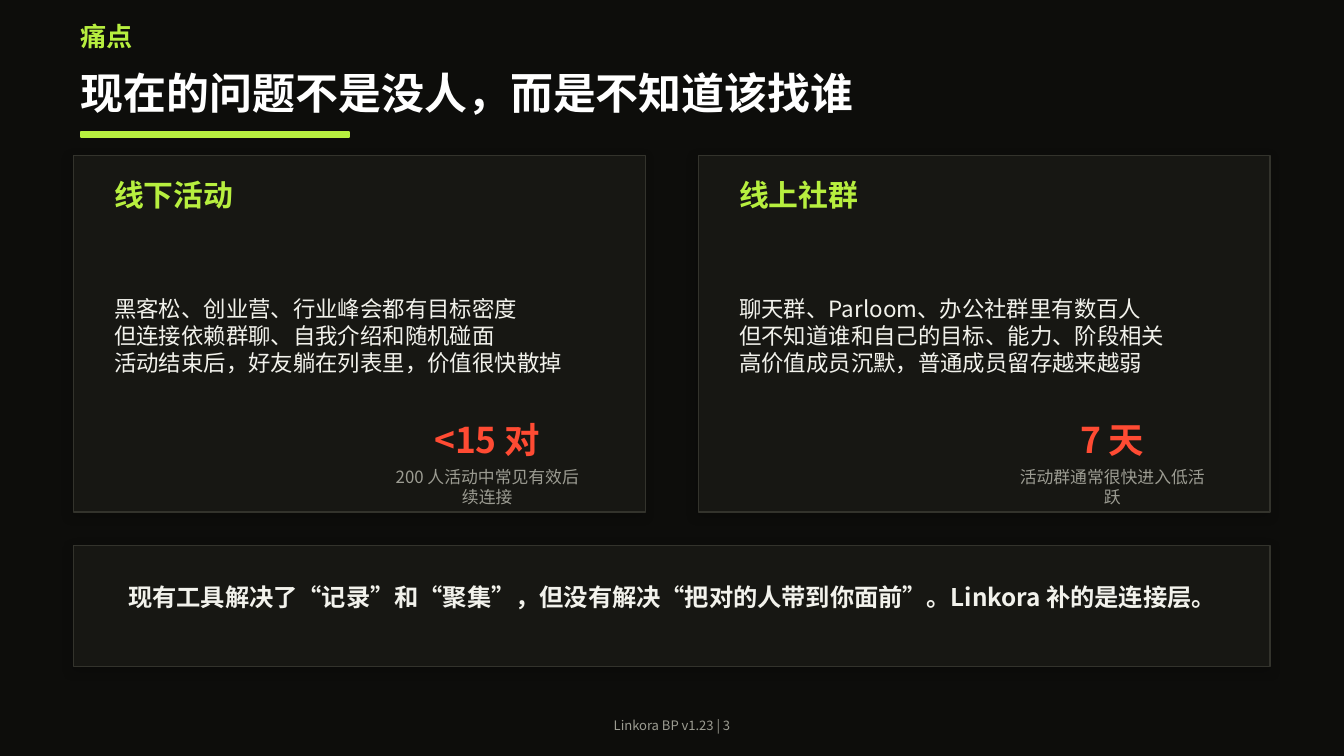
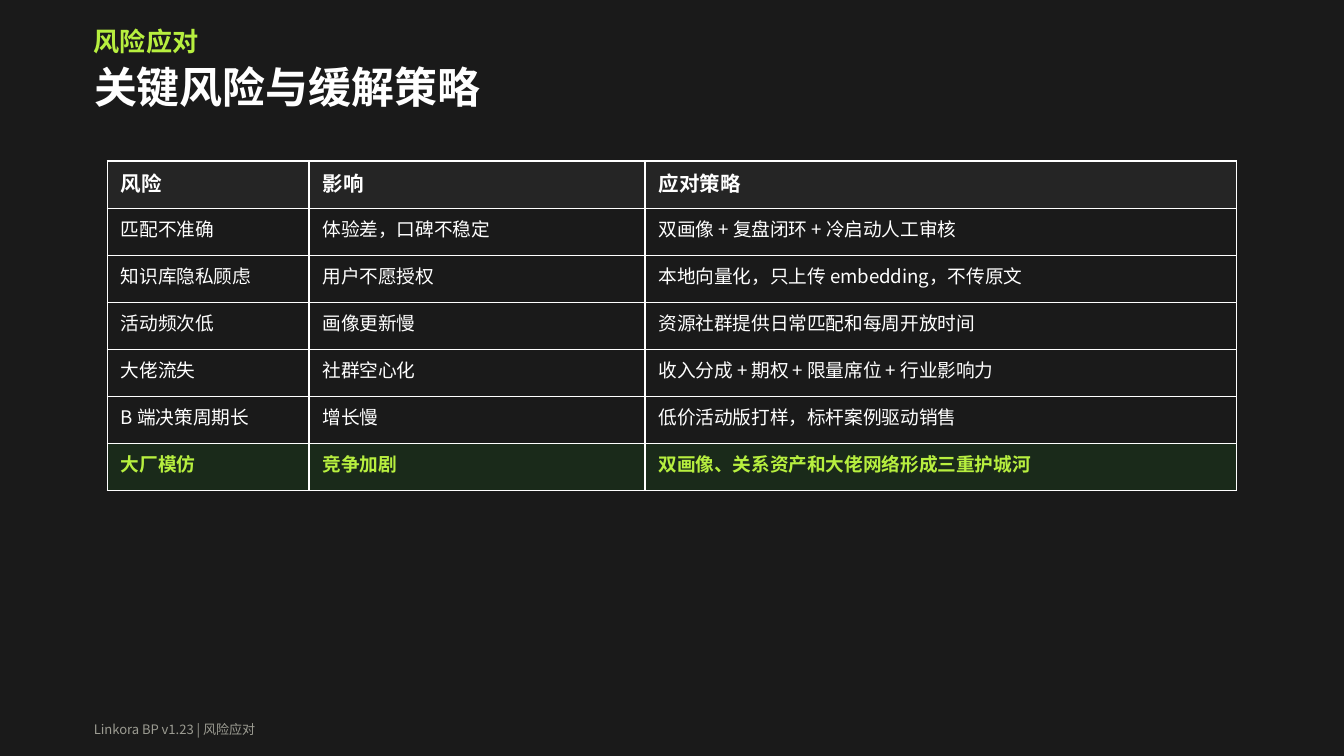
"""Build two dark pitch slides: the pain points and the risk table."""
from dataclasses import dataclass
from typing import NamedTuple

from lxml import etree
from pptx import Presentation
from pptx.dml.color import RGBColor
from pptx.enum.shapes import MSO_SHAPE
from pptx.enum.text import MSO_ANCHOR, MSO_AUTO_SIZE, PP_ALIGN
from pptx.oxml.ns import qn
from pptx.slide import Slide
from pptx.text.text import TextFrame, _Paragraph
from pptx.util import Pt

RECTANGLE = MSO_SHAPE.RECTANGLE
LEFT, CENTER = PP_ALIGN.LEFT, PP_ALIGN.CENTER
TOP, MIDDLE = MSO_ANCHOR.TOP, MSO_ANCHOR.MIDDLE
FIXED, GROW = MSO_AUTO_SIZE.NONE, MSO_AUTO_SIZE.SHAPE_TO_FIT_TEXT

FONT = "Noto Sans CJK SC"
COLORS = {
    "night": "0D0D0B",
    "charcoal": "1A1A1A",
    "card": "171713",
    "card_line": "33332C",
    "header_row": "252525",
    "highlight_row": "1A2A1A",
    "lime": "B7EF3F",
    "red": "FF4B33",
    "white": "FFFFFF",
    "ivory": "F2F2EC",
    "gray": "9C9C92",
    "shadow": "000000",
}
TITLE_ONLY = 5
CARD_TOP, CARD_WIDTH, CARD_HEIGHT = 83.5, 306, 190.8
CARD_LEFT, CARD_STEP = 39.6, 334.8
COLUMN_WIDTHS = (108, 180, 316.8)
ROW_HEIGHT = 25.2


class Box(NamedTuple):
    """Position and size in points."""

    left: float
    top: float
    width: float
    height: float


class TextStyle(NamedTuple):
    """Font size, colour, weight and alignment of a text."""

    size: float
    color: str
    bold: bool = False
    align: PP_ALIGN = LEFT


class Frame(NamedTuple):
    """Anchor, insets and sizing of a text box."""

    anchor: MSO_ANCHOR = MIDDLE
    inset_x: float = 0
    inset_y: float = 0
    wrap: bool = True
    sizing: MSO_AUTO_SIZE = FIXED


@dataclass(frozen=True)
class PainCard:
    """A card with a heading, body lines and one key figure."""

    heading: str
    lines: str
    figure: str
    caption: str


TIGHT = Frame()
LOOSE = Frame(TOP, 7.2, 3.6, False, GROW)

LABEL_BOX = Box(43.2, 10.1, 633.6, 18.7)
TITLE_BOX = Box(43.2, 28.8, 633.6, 41.8)
FOOTER_BOX = Box(43.2, 383, 633.6, 11.5)

LABEL = TextStyle(14, "lime", True)
TITLE = TextStyle(23, "white", True)
HEADING = TextStyle(16, "lime", True)
BODY = TextStyle(12, "ivory")
FIGURE = TextStyle(19, "red", True, CENTER)
CAPTION = TextStyle(9, "gray", False, CENTER)
SUMMARY = TextStyle(13, "ivory", True, CENTER)
HEADER_CELL = TextStyle(11, "white", True)
BODY_CELL = TextStyle(10, "white")
HIGHLIGHT_CELL = TextStyle(10, "lime", True)

PAIN_CARDS = (
    PainCard(
        "线下活动",
        "黑客松、创业营、行业峰会都有目标密度\n"
        "但连接依赖群聊、自我介绍和随机碰面\n"
        "活动结束后，好友躺在列表里，价值很快散掉",
        "<15 对",
        "200 人活动中常见有效后续连接",
    ),
    PainCard(
        "线上社群",
        "聊天群、Parloom、办公社群里有数百人\n"
        "但不知道谁和自己的目标、能力、阶段相关\n"
        "高价值成员沉默，普通成员留存越来越弱",
        "7 天",
        "活动群通常很快进入低活跃",
    ),
)
RISKS = (
    ("风险", "影响", "应对策略"),
    ("匹配不准确", "体验差，口碑不稳定", "双画像 + 复盘闭环 + 冷启动人工审核"),
    ("知识库隐私顾虑", "用户不愿授权", "本地向量化，只上传 embedding，不传原文"),
    ("活动频次低", "画像更新慢", "资源社群提供日常匹配和每周开放时间"),
    ("大佬流失", "社群空心化", "收入分成 + 期权 + 限量席位 + 行业影响力"),
    ("B 端决策周期长", "增长慢", "低价活动版打样，标杆案例驱动销售"),
    ("大厂模仿", "竞争加剧", "双画像、关系资产和大佬网络形成三重护城河"),
)


def rgb(name: str) -> RGBColor:
    """Return the named colour."""
    return RGBColor.from_string(COLORS[name])


def format_paragraph(paragraph: _Paragraph, style: TextStyle) -> None:
    """Apply a style to a paragraph, for Latin and East Asian text."""
    paragraph.alignment = style.align
    font = paragraph.font
    font.name, font.size, font.bold = FONT, Pt(style.size), style.bold
    font.color.rgb = rgb(style.color)
    properties = paragraph._p.pPr.find(qn("a:defRPr"))
    etree.SubElement(properties, qn("a:ea"), typeface=FONT)


def fill_frame(text_frame: TextFrame, text: str, style: TextStyle) -> None:
    """Write lines of text as styled paragraphs."""
    text_frame.text = text
    for paragraph in text_frame.paragraphs:
        format_paragraph(paragraph, style)


def set_text(shape, text: str, box: Box, style: TextStyle, frame: Frame) -> None:
    """Place a text shape and fill it."""
    shape.left, shape.top, shape.width, shape.height = map(Pt, box)
    text_frame = shape.text_frame
    text_frame.margin_left = text_frame.margin_right = Pt(frame.inset_x)
    text_frame.margin_top = text_frame.margin_bottom = Pt(frame.inset_y)
    text_frame.vertical_anchor = frame.anchor
    text_frame.word_wrap = frame.wrap
    text_frame.auto_size = frame.sizing
    fill_frame(text_frame, text, style)


def add_text(slide: Slide, text: str, box: Box, style: TextStyle, frame: Frame = TIGHT) -> None:
    """Add a text box."""
    set_text(slide.shapes.add_textbox(*map(Pt, box)), text, box, style, frame)


def add_rectangle(slide: Slide, box: Box, fill: str, line: str, weight: float):
    """Add a filled rectangle without shadow."""
    shape = slide.shapes.add_shape(RECTANGLE, *map(Pt, box))
    shape.shadow.inherit = False
    shape.fill.solid()
    shape.fill.fore_color.rgb = rgb(fill)
    shape.line.color.rgb = rgb(line)
    shape.line.width = Pt(weight)
    return shape


def add_panel(slide: Slide, box: Box) -> None:
    """Add a dark panel with a soft shadow."""
    panel = add_rectangle(slide, box, "card", "card_line", 0.6)
    effects = panel._element.spPr.find(qn("a:effectLst"))
    shadow = etree.SubElement(
        effects, qn("a:outerShdw"), blurRad=str(Pt(6)), dist=str(Pt(2)),
        dir=str(135 * 60000), algn="bl", rotWithShape="0",
    )
    color = etree.SubElement(shadow, qn("a:srgbClr"), val=COLORS["shadow"])
    etree.SubElement(color, qn("a:alpha"), val="20000")


def add_slide(presentation, background: str, label: str, title: str,
              footer: str, footer_align: PP_ALIGN, frame: Frame) -> Slide:
    """Add a slide with its background, label, title and footer."""
    slide = presentation.slides.add_slide(presentation.slide_layouts[TITLE_ONLY])
    slide.background.fill.solid()
    slide.background.fill.fore_color.rgb = rgb(background)
    set_text(slide.shapes.title, title, TITLE_BOX, TITLE, frame)
    add_text(slide, label, LABEL_BOX, LABEL, frame)
    footer_style = TextStyle(7, "gray", False, footer_align)
    add_text(slide, f"Linkora BP v1.23 | {footer}", FOOTER_BOX, footer_style, frame)
    return slide


def add_pain_card(slide: Slide, card: PainCard, left: float) -> None:
    """Add a pain point card at the given left edge."""
    add_panel(slide, Box(left, CARD_TOP, CARD_WIDTH, CARD_HEIGHT))
    add_text(slide, card.heading, Box(left + 21.6, 95, 244.8, 18.7), HEADING)
    add_text(slide, card.lines, Box(left + 21.6, 131, 255.6, 97.2), BODY)
    add_text(slide, card.figure, Box(left + 169.2, 223.2, 104.4, 24.5), FIGURE)
    add_text(slide, card.caption, Box(left + 169.2, 250.6, 104.4, 20.2), CAPTION)


def build_pain_slide(presentation) -> None:
    """Build the slide on pain points."""
    slide = add_slide(presentation, "night", "痛点", "现在的问题不是没人，而是不知道该找谁",
                      "3", CENTER, TIGHT)
    add_rectangle(slide, Box(43.2, 70.6, 144, 2.9), "lime", "lime", 1)
    for index, card in enumerate(PAIN_CARDS):
        add_pain_card(slide, card, CARD_LEFT + index * CARD_STEP)
    add_panel(slide, Box(CARD_LEFT, 292.3, CARD_STEP + CARD_WIDTH, 64.8))
    add_text(
        slide,
        "现有工具解决了“记录”和“聚集”，但没有解决“把对的人带到你面前”。Linkora 补的是连接层。",
        Box(61.2, 309.6, 597.6, 20.2),
        SUMMARY,
    )


def build_risk_slide(presentation) -> None:
    """Build the slide with the risk table."""
    slide = add_slide(presentation, "charcoal", "风险应对", "关键风险与缓解策略",
                      "风险应对", LEFT, LOOSE)
    box = Box(57.6, 86.4, sum(COLUMN_WIDTHS), ROW_HEIGHT * len(RISKS))
    table = slide.shapes.add_table(len(RISKS), len(COLUMN_WIDTHS), *map(Pt, box)).table
    for column, width in zip(table.columns, COLUMN_WIDTHS):
        column.width = Pt(width)
    row_looks = [("charcoal", BODY_CELL)] * len(RISKS)
    row_looks[0] = ("header_row", HEADER_CELL)
    row_looks[-1] = ("highlight_row", HIGHLIGHT_CELL)
    for row, texts, (fill, style) in zip(table.rows, RISKS, row_looks):
        row.height = Pt(ROW_HEIGHT)
        for cell, text in zip(row.cells, texts):
            cell.fill.solid()
            cell.fill.fore_color.rgb = rgb(fill)
            fill_frame(cell.text_frame, text, style)


def main() -> None:
    """Build and save the presentation."""
    presentation = Presentation()
    presentation.slide_width, presentation.slide_height = Pt(720), Pt(405)
    build_pain_slide(presentation)
    build_risk_slide(presentation)
    presentation.save("out.pptx")


if __name__ == "__main__":
    main()
